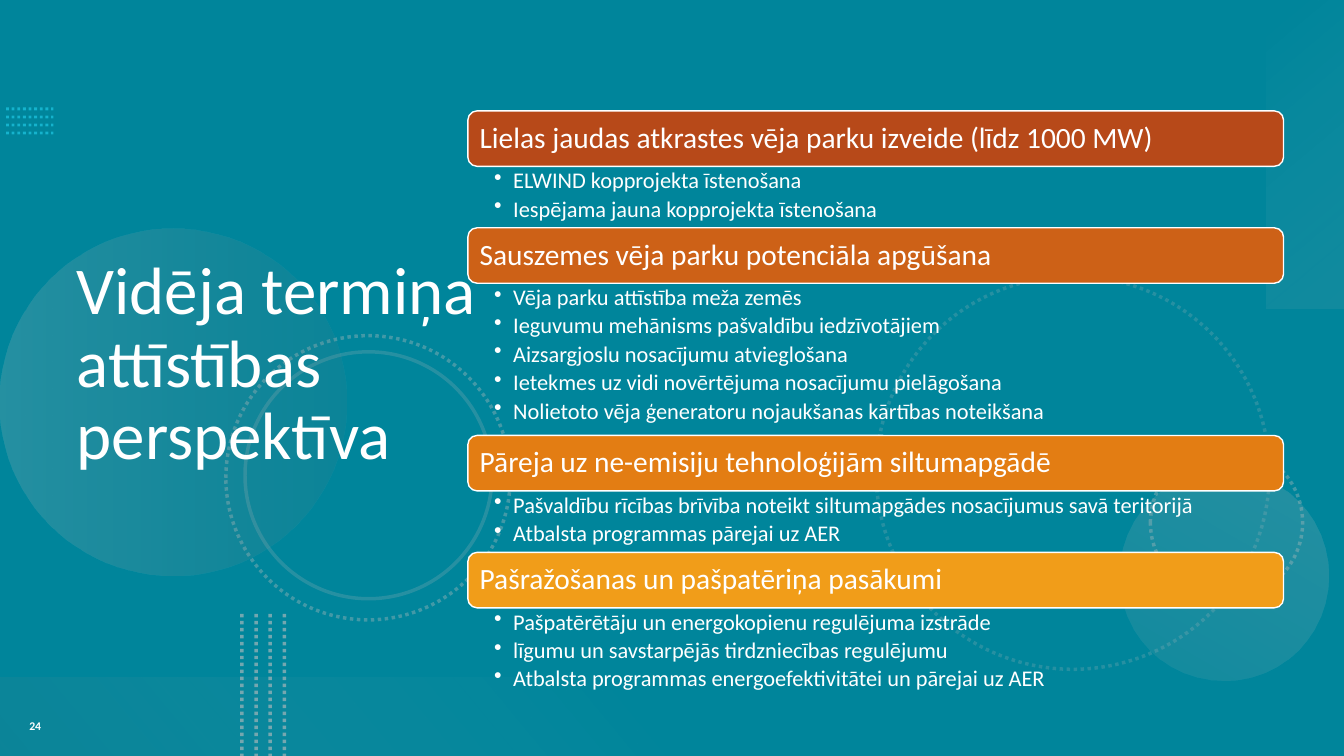
import pptx
import pptx.util
import pptx.dml.color
import pptx.enum.dml
import pptx.enum.shapes
import pptx.enum.text
import pptx.oxml
from pptx.util import Inches

RGB = pptx.dml.color.RGBColor
SHAPE = pptx.enum.shapes.MSO_SHAPE
ANCHOR = pptx.enum.text.MSO_ANCHOR
DOTTED = pptx.enum.dml.MSO_LINE.ROUND_DOT
TEAL = RGB(0x00, 0x85, 0x9B)
CYAN = RGB(0x2A, 0xE1, 0xFF)
WHITE = RGB(0xFF, 0xFF, 0xFF)
SILVER = RGB(0xBF, 0xBF, 0xBF)
GREY = RGB(0x80, 0x80, 0x80)
RUST = RGB(0xB7, 0x49, 0x19)
COPPER = RGB(0xCD, 0x61, 0x17)
ORANGE = RGB(0xE3, 0x7D, 0x13)
AMBER = RGB(0xF1, 0x9D, 0x19)


def set_opacity(shape, *percents):
    """Give the shape's colours, in order, their opacity."""
    colours = shape._element.spPr.iter(pptx.oxml.ns.qn("a:srgbClr"))
    for colour, percent in zip(colours, percents):
        alpha = pptx.oxml.parse_xml(f'<a:alpha {pptx.oxml.ns.nsdecls("a")} val="{percent * 1000}"/>')
        colour.append(alpha)


def add_text(paragraph, text, size, bold=False):
    run = paragraph.add_run()
    run.text = text
    run.font.name = "Calibri"
    run.font.size = pptx.util.Pt(size)
    run.font.bold = bold
    run.font.color.rgb = WHITE


deck = pptx.Presentation()
deck.slide_width = Inches(13.33)
deck.slide_height = Inches(7.5)
slide = deck.slides.add_slide(deck.slide_layouts[5])
slide.background.fill.solid()
slide.background.fill.fore_color.rgb = TEAL

# Dotted lines: four short rows at the left edge, four columns at the bottom
dotted_lines = []
for i in range(4):
    row = 1.08 + 0.08 * i
    column = 2.4 + 0.14 * i
    dotted_lines.append((0.06, row, 0.53, row, CYAN, 2, 50))
    dotted_lines.append((column, 6.09, column, 7.5, SILVER, 2.5, 60))
for x1, y1, x2, y2, colour, width, opacity in dotted_lines:
    dots = slide.shapes.add_connector(
        pptx.enum.shapes.MSO_CONNECTOR.STRAIGHT, Inches(x1), Inches(y1), Inches(x2), Inches(y2))
    dots.line.color.rgb = colour
    dots.line.width = pptx.util.Pt(width)
    dots.line.dash_style = DOTTED
    set_opacity(dots, opacity)
    dots._element.spPr.append(pptx.oxml.parse_xml(f'<a:effectLst {pptx.oxml.ns.nsdecls("a")}/>'))

# Outlined rings: left, top, diameter, dash, opacity
for left, top, diameter, dash, opacity in [
    (8.69, 2.74, 3.9, DOTTED, 20),
    (11.41, 4.43, 1.51, DOTTED, 35),
    (2.24, 3.33, 2.82, DOTTED, 35),
    (2.43, 3.49, 2.45, None, 20),
]:
    ring = slide.shapes.add_shape(
        SHAPE.OVAL, Inches(left), Inches(top), Inches(diameter), Inches(diameter))
    ring.shadow.inherit = False
    ring.fill.background()
    ring.line.color.rgb = SILVER
    ring.line.width = pptx.util.Pt(2.5)
    ring.line.dash_style = dash
    set_opacity(ring, opacity)

# Translucent discs and corner bands
for kind, left, top, width, height, rotation, angle, start, end, opacities in [
    (SHAPE.OVAL, 0, 2.27, 3.44, 3.44, 270, 90, SILVER, GREY, (20, 10)),
    (SHAPE.OVAL, 11.1, 4.67, 2.08, 2.08, 210, 90, SILVER, SILVER, (10, 20)),
    (SHAPE.RECTANGLE, 11.42, 1.14, 3.06, 0.78, 270, 140, WHITE, SILVER, (0, 10)),
    (SHAPE.RECTANGLE, 0, 6.72, 6.67, 0.78, 180, 140, GREY, WHITE, (10, 0)),
]:
    glow = slide.shapes.add_shape(kind, Inches(left), Inches(top), Inches(width), Inches(height))
    glow.shadow.inherit = False
    glow.rotation = rotation
    glow.line.fill.background()
    glow.fill.gradient()
    glow.fill.gradient_angle = 360 - angle
    for stop, colour in zip(glow.fill.gradient_stops, (start, end)):
        stop.color.rgb = colour
    set_opacity(glow, *opacities)

# Title, brought in front of the decoration
title = slide.shapes.title
title.left, title.top = Inches(0.69), Inches(0.54)
title.width, title.height = Inches(4.59), Inches(6.17)
heading = title.text_frame
heading.word_wrap = True
heading.auto_size = pptx.enum.text.MSO_AUTO_SIZE.NONE
heading.vertical_anchor = ANCHOR.MIDDLE
heading.margin_left = heading.margin_right = Inches(0.07)
heading.margin_top = heading.margin_bottom = Inches(0.04)
heading.paragraphs[0].alignment = pptx.enum.text.PP_ALIGN.LEFT
heading.paragraphs[0].line_spacing = 0.9
add_text(heading.paragraphs[0], "Vidēja termiņa attīstības perspektīva", 47.8)
slide.shapes._spTree.append(title._element)

# Slide number
number = slide.shapes.add_textbox(0, Inches(6.9), Inches(0.7), Inches(0.6)).text_frame
number.word_wrap = True
number.vertical_anchor = ANCHOR.MIDDLE
number.margin_left = number.margin_right = Inches(0.07)
number.margin_top = number.margin_bottom = Inches(0.04)
number.paragraphs[0].alignment = pptx.enum.text.PP_ALIGN.CENTER
number.paragraphs[0].space_after = pptx.util.Pt(4.2)
add_text(number.paragraphs[0], "24", 8.4, bold=True)

# Themes: a coloured bar followed by its measures
themes = [
    (RUST, "Lielas jaudas atkrastes vēja parku izveide (līdz 1000 MW)", [
        "ELWIND kopprojekta īstenošana",
        "Iespējama jauna kopprojekta īstenošana"]),
    (COPPER, "Sauszemes vēja parku potenciāla apgūšana", [
        "Vēja parku attīstība meža zemēs",
        "Ieguvumu mehānisms pašvaldību iedzīvotājiem",
        "Aizsargjoslu nosacījumu atvieglošana",
        "Ietekmes uz vidi novērtējuma nosacījumu pielāgošana",
        "Nolietoto vēja ģeneratoru nojaukšanas kārtības noteikšana"]),
    (ORANGE, "Pāreja uz ne-emisiju tehnoloģijām siltumapgādē", [
        "Pašvaldību rīcības brīvība noteikt siltumapgādes nosacījumus savā teritorijā",
        "Atbalsta programmas pārejai uz AER"]),
    (AMBER, "Pašražošanas un pašpatēriņa pasākumi", [
        "Pašpatērētāju un energokopienu regulējuma izstrāde",
        "līgumu un savstarpējās tirdzniecības regulējumu",
        "Atbalsta programmas energoefektivitātei un pārejai uz AER"]),
]
left, width, bar_height = Inches(4.64), Inches(8.09), Inches(0.55)
top = Inches(1.1)
for colour, theme, measures in themes:
    bar = slide.shapes.add_shape(SHAPE.ROUNDED_RECTANGLE, left, top, width, bar_height)
    bar.shadow.inherit = False
    bar.fill.solid()
    bar.fill.fore_color.rgb = colour
    bar.line.color.rgb = WHITE
    bar.line.width = pptx.util.Pt(1)
    label = bar.text_frame
    label.word_wrap = True
    label.vertical_anchor = ANCHOR.MIDDLE
    label.margin_left = label.margin_right = Inches(0.09)
    label.paragraphs[0].alignment = pptx.enum.text.PP_ALIGN.LEFT
    label.paragraphs[0].line_spacing = 0.9
    add_text(label.paragraphs[0], theme, 21)
    top += bar_height

    list_height = Inches(0.3 * len(measures) + 0.01)
    bullets = slide.shapes.add_textbox(left, top, width, list_height).text_frame
    bullets.word_wrap = True
    bullets.margin_left, bullets.margin_right = Inches(0.26), Inches(0.16)
    bullets.margin_top = bullets.margin_bottom = Inches(0.03)
    for i, measure in enumerate(measures):
        item = bullets.paragraphs[0] if i == 0 else bullets.add_paragraph()
        item.level = 1
        item.line_spacing = 0.9
        item.space_after = pptx.util.Pt(3)
        properties = item._p.get_or_add_pPr()
        properties.set("marL", str(Inches(0.19)))
        properties.set("indent", str(-Inches(0.19)))
        properties.append(pptx.oxml.parse_xml(f'<a:buChar {pptx.oxml.ns.nsdecls("a")} char="•"/>'))
        add_text(item, measure, 16)
    top += list_height

deck.save("out.pptx")
